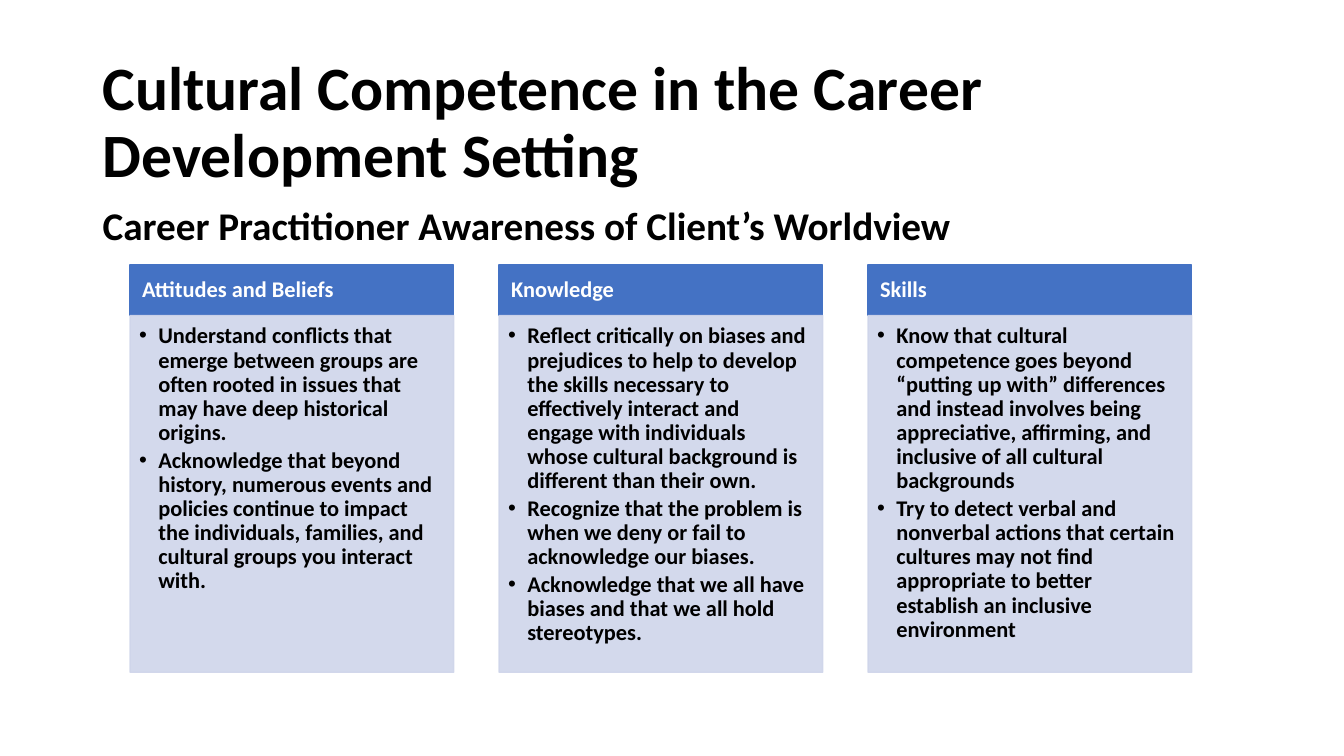
from lxml import etree
from pptx import Presentation
from pptx.dml.color import RGBColor
from pptx.enum.shapes import MSO_SHAPE
from pptx.enum.text import MSO_ANCHOR, MSO_AUTO_SIZE, PP_ALIGN
from pptx.oxml.ns import qn
from pptx.util import Inches, Pt

RECTANGLE = MSO_SHAPE.RECTANGLE
TOP, MIDDLE = MSO_ANCHOR.TOP, MSO_ANCHOR.MIDDLE
LEFT = PP_ALIGN.LEFT
NO_AUTOFIT = MSO_AUTO_SIZE.NONE

# Grid of the three columns, in inches
FIRST_COLUMN, COLUMN_PITCH, COLUMN_WIDTH = 1.29, 3.66, 3.21
HEADING_TOP, HEADING_HEIGHT, DETAIL_HEIGHT = 2.63, 0.5, 3.54
TEXT_LEFT, TEXT_WIDTH = 0.92, 11.5

COMPETENCES = [
    ("Attitudes and Beliefs", [
        "Understand conflicts that emerge between groups are often rooted in "
        "issues that may have deep historical origins.",
        "Acknowledge that beyond history, numerous events and policies continue "
        "to impact the individuals, families, and cultural groups you interact with.",
    ]),
    ("Knowledge", [
        "Reflect critically on biases and prejudices to help to develop the skills "
        "necessary to effectively interact and engage with individuals whose "
        "cultural background is different than their own.",
        "Recognize that the problem is when we deny or fail to acknowledge our biases.",
        "Acknowledge that we all have biases and that we all hold stereotypes.",
    ]),
    ("Skills", [
        "Know that cultural competence goes beyond “putting up with” differences "
        "and instead involves being appreciative, affirming, and inclusive of all "
        "cultural backgrounds",
        "Try to detect verbal and nonverbal actions that certain cultures may not "
        "find appropriate to better establish an inclusive environment",
    ]),
]


def color(hex_value):
    return RGBColor.from_string(hex_value)


def apply(target, values):
    for name, value in values.items():
        setattr(target, name, value)


class SlideBuilder:
    font = "Calibri"
    ink, paper, accent, tint = "000000", "FFFFFF", "4472C4", "CFD5EA"

    def __init__(self, presentation):
        self.slide = presentation.slides.add_slide(presentation.slide_layouts[5])

    def fill_text(self, frame, texts, size, ink, anchor=TOP, insets=(0.1, 0.05, 0.1, 0.05),
                  bullets=False, **spacing):
        sides = ("margin_left", "margin_top", "margin_right", "margin_bottom")
        apply(frame, {"word_wrap": True, "auto_size": NO_AUTOFIT, "vertical_anchor": anchor,
                      **dict(zip(sides, map(Inches, insets)))})
        for index, text in enumerate(texts):
            paragraph = frame.add_paragraph() if index else frame.paragraphs[0]
            apply(paragraph, {"alignment": LEFT, "line_spacing": 0.9, **spacing})
            run = paragraph.add_run()
            run.text = text
            apply(run.font, {"name": self.font, "size": Pt(size), "bold": True})
            run.font.color.rgb = color(ink)
            if bullets:
                self.bullet(paragraph)

    def bullet(self, paragraph):
        paragraph.level = 1
        properties = paragraph._p.get_or_add_pPr()
        properties.set("marL", str(Inches(0.19)))
        properties.set("indent", str(-Inches(0.19)))
        etree.SubElement(properties, qn("a:buFont")).set("typeface", "Arial")
        etree.SubElement(properties, qn("a:buChar")).set("char", "•")

    def title(self, text):
        title = self.slide.shapes.title
        apply(title, {"left": Inches(TEXT_LEFT), "top": Inches(0.61),
                      "width": Inches(TEXT_WIDTH), "height": Inches(1.24)})
        self.fill_text(title.text_frame, [text], 44, self.ink, MIDDLE)

    def subtitle(self, text):
        box = self.slide.shapes.add_textbox(
            *map(Inches, (TEXT_LEFT, 2, TEXT_WIDTH, 0.6)))
        self.fill_text(box.text_frame, [text], 28, self.ink, space_before=Pt(10))

    def panel(self, column, top, height, fill, opacity=100):
        left = FIRST_COLUMN + column * COLUMN_PITCH
        panel = self.slide.shapes.add_shape(
            RECTANGLE, *map(Inches, (left, top, COLUMN_WIDTH, height)))
        panel.shadow.inherit = False
        panel.line.width = Pt(1)
        for paint in (panel.fill, panel.line.fill):
            paint.solid()
            paint.fore_color.rgb = color(fill)
        if opacity < 100:
            for tone in panel._element.spPr.iter(qn("a:srgbClr")):
                etree.SubElement(tone, qn("a:alpha")).set("val", str(opacity * 1000))
        return panel.text_frame

    def competence(self, column, heading, points):
        header = self.panel(column, HEADING_TOP, HEADING_HEIGHT, self.accent)
        self.fill_text(header, [heading], 16, self.paper, MIDDLE, (0.12, 0.07, 0.12, 0.07))
        details = self.panel(column, HEADING_TOP + HEADING_HEIGHT, DETAIL_HEIGHT,
                             self.tint, opacity=90)
        self.fill_text(details, points, 16, self.ink, TOP, (0.09, 0.09, 0.12, 0.14),
                       bullets=True, space_after=Pt(2.4))


def main():
    presentation = Presentation()
    apply(presentation, {"slide_width": Inches(13.33), "slide_height": Inches(7.5)})
    builder = SlideBuilder(presentation)

    # Title and subtitle
    builder.title("Cultural Competence in the Career Development Setting")
    builder.subtitle("Career Practitioner Awareness of Client’s Worldview")

    # One column for each competence
    for column, (heading, points) in enumerate(COMPETENCES):
        builder.competence(column, heading, points)

    presentation.save("out.pptx")


if __name__ == "__main__":
    main()
